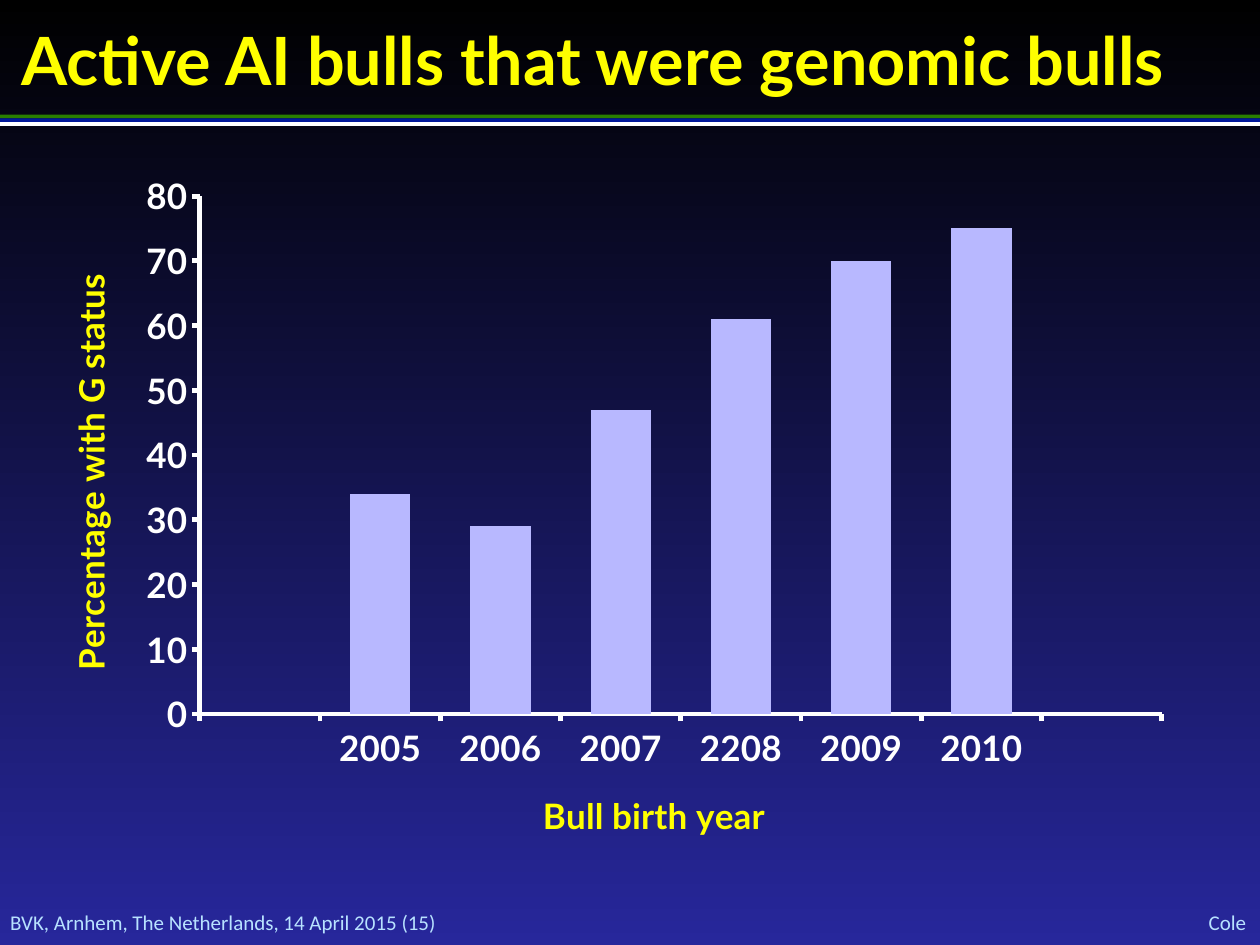
from dataclasses import dataclass

from pptx import Presentation
from pptx.chart.data import CategoryChartData as Data
from pptx.dml.color import RGBColor as Rgb
from pptx.enum.chart import XL_CHART_TYPE as Kind, XL_TICK_MARK as Tick
from pptx.enum.shapes import MSO_SHAPE as Form
from pptx.enum.text import MSO_ANCHOR as Anchor, PP_ALIGN as Align
from pptx.oxml import parse_xml
from pptx.oxml.ns import nsdecls, qn
from pptx.util import Inches, Pt


@dataclass(frozen=True)
class Theme:
    """Colours, fonts and type sizes of the slide."""
    top: str = "000000"
    base: str = "27279B"
    title: str = "FFFF00"
    axis: str = "FFFFFF"
    bar: str = "B8B8FF"
    foot: str = "B8E2FF"
    green: str = "2A7E00"
    blue: str = "001799"
    head: str = "Lato"
    body: str = "Calibri"
    big: int = 38
    mid: int = 20
    small: int = 12


THEME = Theme()


def style(font, face, size, color, bold=False):
    """Set face, size, colour and weight of a font."""
    font.name, font.size, font.bold = face, Pt(size), bold
    font.color.rgb = Rgb.from_string(color)


def write(frame, text, align=Align.LEFT, anchor=Anchor.MIDDLE, **look):
    """Fill a text frame with one formatted line."""
    frame.margin_left = frame.margin_right = 0
    frame.margin_top = frame.margin_bottom = 0
    frame.word_wrap, frame.vertical_anchor = True, anchor
    para = frame.paragraphs[0]
    para.alignment = align
    run = para.add_run()
    run.text = text
    style(run.font, **look)


def paint(slide):
    """Give the slide its vertical gradient."""
    fill = slide.background.fill
    fill.gradient()
    fill.gradient_angle = 270
    for stop, color in zip(fill.gradient_stops, (THEME.top, THEME.base)):
        stop.color.rgb = Rgb.from_string(color)


def add_title(slide, box, text):
    """Place the title in its box."""
    title = slide.shapes.title
    title.left, title.top, title.width, title.height = map(Inches, box)
    write(title.text_frame, text, anchor=Anchor.TOP, face=THEME.head,
          size=THEME.big, color=THEME.title, bold=True)


def add_rule(slide, box):
    """Stack three equal colour bands in the box."""
    left, top, width, height = box
    step = height / 3
    for row, color in enumerate((THEME.green, THEME.blue, THEME.axis)):
        band = slide.shapes.add_shape(
            Form.RECTANGLE, Inches(left), Inches(top + row * step),
            Inches(width), Inches(step))
        band.shadow.inherit = False
        band.fill.solid()
        band.fill.fore_color.rgb = Rgb.from_string(color)
        band.line.fill.background()


def add_foot(slide, box, venue, name):
    """Write venue at the left and name at the right of the box."""
    left, top, width, height = box
    split = 8.6
    parts = ((venue, left, split, Align.LEFT),
             (name, left + split, width - split, Align.RIGHT))
    for text, start, span, align in parts:
        note = slide.shapes.add_textbox(*map(Inches, (start, top, span, height)))
        write(note.text_frame, text, align=align, face=THEME.body,
              size=THEME.small, color=THEME.foot)


def set_axis(axis, text):
    """Format an axis and its title."""
    axis.has_major_gridlines = False
    axis.major_tick_mark, axis.minor_tick_mark = Tick.OUTSIDE, Tick.NONE
    axis.format.line.width = Pt(2.75)
    axis.format.line.color.rgb = Rgb.from_string(THEME.axis)
    style(axis.tick_labels.font, THEME.head, THEME.mid, THEME.axis, True)
    write(axis.axis_title.text_frame, text, align=Align.CENTER,
          face=THEME.head, size=THEME.mid, color=THEME.title, bold=True)


def set_plot(chart, **area):
    """Fix the inner plot area as fractions of the chart."""
    modes = "".join(f'<c:{key}Mode val="edge"/>' for key in "xy")
    sizes = "".join(f'<c:{key} val="{val}"/>' for key, val in area.items())
    plot = chart._chartSpace.chart.plotArea
    for old in plot.findall(qn("c:layout")):
        plot.remove(old)
    plot.insert(0, parse_xml(
        f'<c:layout {nsdecls("c")}><c:manualLayout>'
        f'<c:layoutTarget val="inner"/>{modes}{sizes}'
        '</c:manualLayout></c:layout>'))


def add_bars(slide, box):
    """Place the column chart in its box."""
    data = Data()
    data.categories = ["", "2005", "2006", "2007", "2208", "2009", "2010", ""]
    data.add_series("Series 1", [None, 34, 29, 47, 61, 70, 75, None])
    chart = slide.shapes.add_chart(
        Kind.COLUMN_CLUSTERED, *map(Inches, box), data).chart
    chart.has_legend = chart.has_title = False
    style(chart.font, THEME.body, THEME.mid, THEME.axis, True)
    plot = chart.plots[0]
    plot.gap_width, plot.vary_by_categories = 100, False
    fill = plot.series[0].format.fill
    fill.solid()
    fill.fore_color.rgb = Rgb.from_string(THEME.bar)
    set_axis(chart.category_axis, "Bull birth year")
    scale = chart.value_axis
    set_axis(scale, "Percentage with G status")
    scale.minimum_scale, scale.maximum_scale, scale.major_unit = 0, 80, 10
    set_plot(chart, x=0.13, y=0.04, w=0.83, h=0.76)


def main():
    """Build and save the slide."""
    deck = Presentation()
    deck.slide_width, deck.slide_height = Inches(10), Inches(7.5)
    slide = deck.slides.add_slide(deck.slide_layouts[5])
    paint(slide)
    add_foot(slide, (0.08, 7.22, 9.81, 0.2),
             "BVK, Arnhem, The Netherlands, 14 April 2015 (15)", "Cole")
    add_rule(slide, (0, 0.91, 10, 0.09))
    add_title(slide, (0.17, 0.15, 9.67, 0.64),
              "Active AI bulls that were genomic bulls")
    add_bars(slide, (0.39, 1.34, 9.2, 5.41))
    deck.save("out.pptx")


if __name__ == "__main__":
    main()
